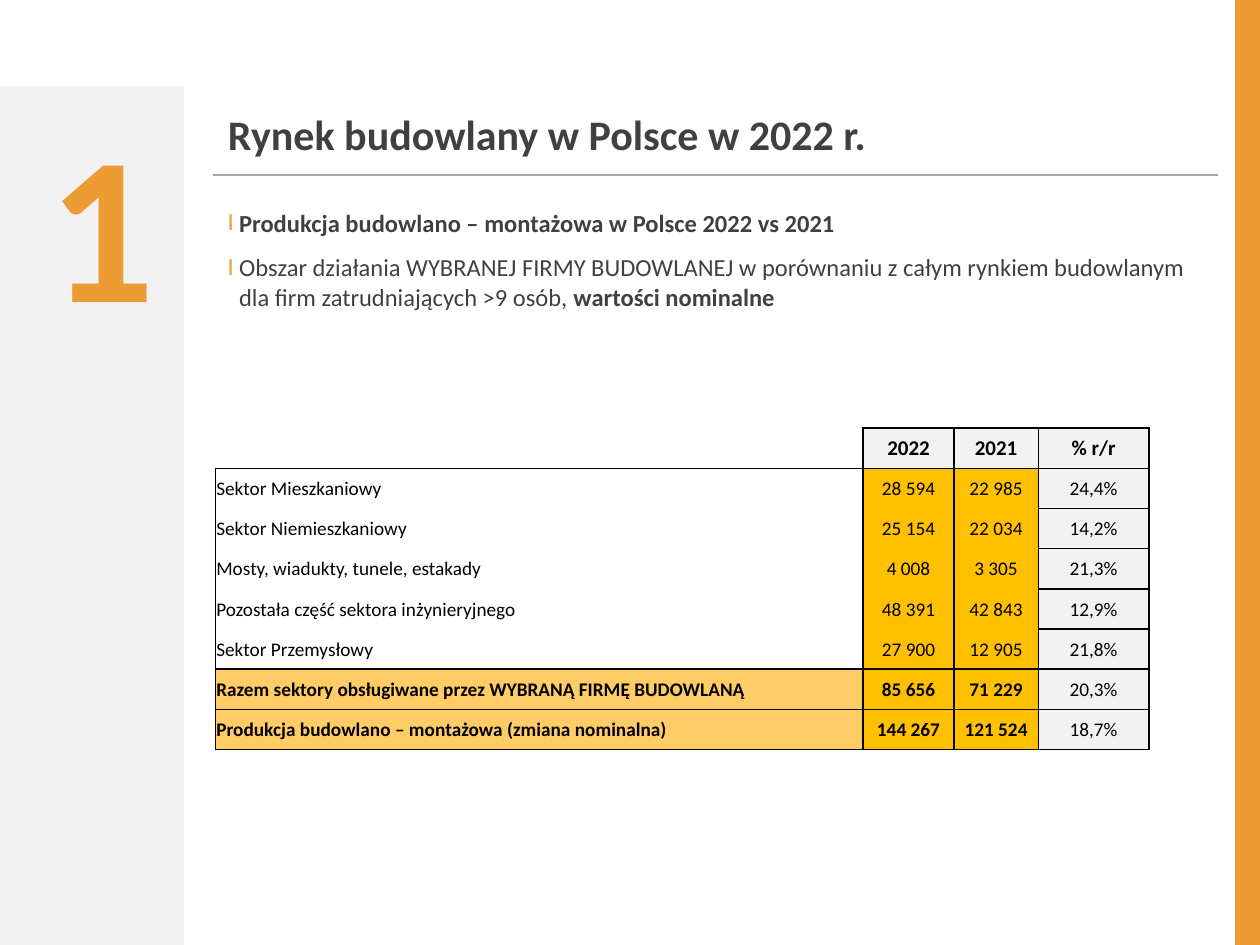
from dataclasses import dataclass

from lxml import etree
from pptx import Presentation
from pptx.dml.color import RGBColor
from pptx.enum.shapes import MSO_CONNECTOR, MSO_SHAPE
from pptx.enum.text import MSO_ANCHOR, PP_ALIGN
from pptx.oxml.ns import qn
from pptx.util import Cm, Pt

RECTANGLE = MSO_SHAPE.RECTANGLE
STRAIGHT = MSO_CONNECTOR.STRAIGHT
TOP, MIDDLE = MSO_ANCHOR.TOP, MSO_ANCHOR.MIDDLE
LEFT, CENTER, RIGHT = PP_ALIGN.LEFT, PP_ALIGN.CENTER, PP_ALIGN.RIGHT


@dataclass(frozen=True)
class Theme:
    font: str = "Calibri"
    orange: str = "ED9B33"
    amber: str = "FFC000"
    peach: str = "FFCC66"
    pale: str = "F2F2F2"
    rule: str = "A6A6A6"
    text: str = "404040"
    black: str = "000000"
    number_size: int = 120
    title_size: int = 24
    body_size: int = 14
    header_size: int = 12
    cell_size: int = 11


THEME = Theme()
TITLE = "Rynek budowlany w Polsce w 2022 r."
BULLETS = [
    [("Produkcja budowlano – montażowa w Polsce 2022 vs 2021", True)],
    [
        ("Obszar działania WYBRANEJ FIRMY BUDOWLANEJ w porównaniu z całym rynkiem "
         "budowlanym dla firm zatrudniających >9 osób, ", False),
        ("wartości nominalne", True),
    ],
]
HEADER, FIRST_SECTOR, LAST_SECTOR, LAST_TOTAL = 1, 2, 6, 8
ROWS = [
    ("", "", "", ""),
    ("", "2022", "2021", "% r/r"),
    ("Sektor Mieszkaniowy", "28 594", "22 985", "24,4%"),
    ("Sektor Niemieszkaniowy", "25 154", "22 034", "14,2%"),
    ("Mosty, wiadukty, tunele, estakady", "4 008", "3 305", "21,3%"),
    ("Pozostała część sektora inżynieryjnego", "48 391", "42 843", "12,9%"),
    ("Sektor Przemysłowy", "27 900", "12 905", "21,8%"),
    ("Razem sektory obsługiwane przez WYBRANĄ FIRMĘ BUDOWLANĄ", "85 656", "71 229", "20,3%"),
    ("Produkcja budowlano – montażowa (zmiana nominalna)", "144 267", "121 524", "18,7%"),
    ("", "", "", ""),
]
COLUMN_WIDTHS = [13.06, 1.83, 1.7, 2.23]
ROW_HEIGHT = 0.81
CHANGE_COLUMN = 3


def style_span(span, size, color, bold):
    span.font.name = THEME.font
    span.font.size = Pt(size)
    span.font.bold = bold
    span.font.color.rgb = RGBColor.from_string(color)


def place(shape, left, top, width, height):
    shape.left, shape.top = Cm(left), Cm(top)
    shape.width, shape.height = Cm(width), Cm(height)


def add_band(page, left, top, width, height, color):
    band = page.shapes.add_shape(RECTANGLE, Cm(left), Cm(top), Cm(width), Cm(height))
    band.shadow.inherit = False
    band.fill.solid()
    band.fill.fore_color.rgb = RGBColor.from_string(color)
    band.line.fill.background()


def add_rule(page, left, right, height):
    rule = page.shapes.add_connector(STRAIGHT, Cm(left), Cm(height), Cm(right), Cm(height))
    rule.line.color.rgb = RGBColor.from_string(THEME.rule)
    rule.line.width = Pt(0.75)
    etree.SubElement(rule._element.spPr, qn("a:effectLst"))


def add_title(page):
    title = page.shapes.title
    place(title, 4.34, 1.9, 20.27, 1.6)
    title.text_frame.text = TITLE
    title.text_frame.vertical_anchor = MIDDLE
    para = title.text_frame.paragraphs[0]
    para.alignment = LEFT
    style_span(para.runs[0], THEME.title_size, THEME.text, True)


def add_section_number(page, number):
    box = page.shapes.add_textbox(Cm(-3.81), Cm(1.75), Cm(7.19), Cm(6.07))
    box.text_frame.word_wrap = True
    box.text_frame.text = number
    para = box.text_frame.paragraphs[0]
    para.alignment = RIGHT
    style_span(para.runs[0], THEME.number_size, THEME.orange, True)


def add_bullet(para):
    properties = para._p.get_or_add_pPr()
    properties.set("marL", str(Cm(0.23)))
    properties.set("indent", str(-Cm(0.23)))
    color = etree.SubElement(properties, qn("a:buClr"))
    etree.SubElement(color, qn("a:srgbClr"), val=THEME.orange)
    etree.SubElement(properties, qn("a:buFont"), typeface=THEME.font)
    etree.SubElement(properties, qn("a:buChar"), char="I")


def add_bullets(page):
    box = page.shapes.add_textbox(Cm(4.34), Cm(4.06), Cm(20.27), Cm(13.79))
    frame = box.text_frame
    frame.word_wrap = True
    frame.vertical_anchor = TOP
    for index, parts in enumerate(BULLETS):
        para = frame.add_paragraph() if index else frame.paragraphs[0]
        add_bullet(para)
        para.space_before = Pt(2.8 if index else 0)
        para.space_after = Pt(6)
        for text, bold in parts:
            span = para.add_run()
            span.text = text
            style_span(span, THEME.body_size, THEME.text, bold)


def cell_edges(row, column):
    if row < HEADER:
        return "B" if column else ""
    if row > LAST_TOTAL:
        return "T"
    if row == HEADER and column == 0:
        return "RB"
    if FIRST_SECTOR <= row <= LAST_SECTOR and column < CHANGE_COLUMN:
        return "LR" + "T" * (row == FIRST_SECTOR) + "B" * (row == LAST_SECTOR)
    return "LRTB"


def cell_fill(row, column):
    if row < HEADER or row > LAST_TOTAL or (column == 0 and row <= LAST_SECTOR):
        return None
    if row == HEADER or column == CHANGE_COLUMN:
        return THEME.pale
    return THEME.amber if column else THEME.peach


def draw_borders(cell, edges):
    properties = cell._tc.get_or_add_tcPr()
    for side in "LRTB":
        line = etree.SubElement(properties, qn(f"a:ln{side}"), w=str(Pt(1)))
        if side in edges:
            fill = etree.SubElement(line, qn("a:solidFill"))
            etree.SubElement(fill, qn("a:srgbClr"), val=THEME.black)
        else:
            etree.SubElement(line, qn("a:noFill"))


def format_cell(cell, row, column, text):
    draw_borders(cell, cell_edges(row, column))
    color = cell_fill(row, column)
    if color:
        cell.fill.solid()
        cell.fill.fore_color.rgb = RGBColor.from_string(color)
    else:
        cell.fill.background()
    cell.margin_left = cell.margin_right = cell.margin_top = Cm(0.02)
    cell.margin_bottom = 0
    cell.vertical_anchor = MIDDLE
    cell.text_frame.text = text
    para = cell.text_frame.paragraphs[0]
    para.alignment = CENTER if column else LEFT
    bold = row == HEADER or (row > LAST_SECTOR and column < CHANGE_COLUMN)
    size = THEME.header_size if row == HEADER else THEME.cell_size
    for span in para.runs:
        style_span(span, size, THEME.black, bold)


def add_market_table(page):
    frame = page.shapes.add_table(
        len(ROWS), len(COLUMN_WIDTHS), Cm(4.34), Cm(7.82),
        Cm(sum(COLUMN_WIDTHS)), Cm(ROW_HEIGHT * len(ROWS)))
    table = frame.table
    table.first_row = table.horz_banding = False
    for column, width in zip(table.columns, COLUMN_WIDTHS):
        column.width = Cm(width)
    for row, values in enumerate(ROWS):
        table.rows[row].height = Cm(ROW_HEIGHT)
        for column, text in enumerate(values):
            format_cell(table.cell(row, column), row, column, text)


def main():
    deck = Presentation()
    deck.slide_width, deck.slide_height = Cm(25.4), Cm(19.05)
    page = deck.slides.add_slide(deck.slide_layouts[5])
    add_band(page, 0, 1.73, 3.71, 17.32, THEME.pale)
    add_band(page, 24.9, 0, 0.5, 19.05, THEME.orange)
    add_rule(page, 4.29, 24.56, 3.53)
    add_section_number(page, "1")
    add_bullets(page)
    add_title(page)
    add_market_table(page)
    deck.save("out.pptx")


if __name__ == "__main__":
    main()
